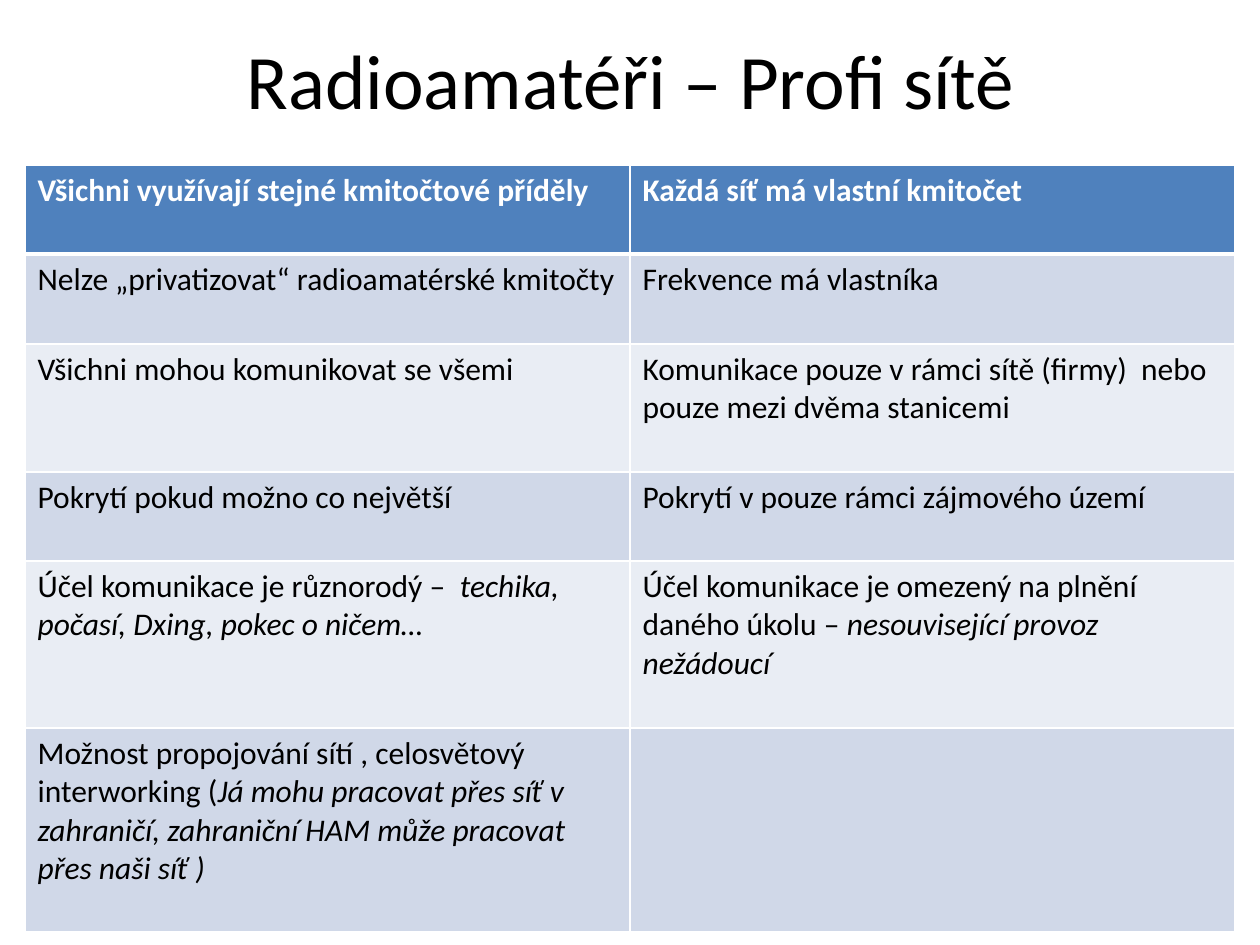
from lxml import etree
from pptx import Presentation
from pptx import util as u
from pptx.dml.color import RGBColor
from pptx.enum import text
from pptx.oxml.ns import qn

TITLE = "Radioamatéři – Profi sítě"
# Each cell is (upright text, italic text).
ROWS = [
    [("Všichni využívají stejné kmitočtové příděly", ""),
     ("Každá síť má vlastní kmitočet", "")],
    [("Nelze „privatizovat“ radioamatérské kmitočty", ""),
     ("Frekvence má vlastníka", "")],
    [("Všichni mohou komunikovat se všemi", ""),
     ("Komunikace pouze v rámci sítě (firmy)  nebo pouze mezi dvěma stanicemi", "")],
    [("Pokrytí pokud možno co největší", ""),
     ("Pokrytí v pouze rámci zájmového území", "")],
    [("Účel komunikace je různorodý –  ", "techika, počasí, Dxing, pokec o ničem…"),
     ("Účel komunikace je omezený na plnění daného úkolu – ",
      "nesouvisející provoz nežádoucí")],
    [("Možnost propojování sítí , celosvětový interworking (",
      "Já mohu pracovat přes síť v zahraničí, zahraniční HAM může pracovat přes naši síť )"),
     ("", "")],
]
ROW_HEIGHTS = [89, 90, 128, 89, 167, 204]
COL_WIDTH = 605
COLORS = {"text": "000000", "white": "FFFFFF", "header": "4F81BD",
          "odd": "D0D8E8", "even": "E9EDF4"}


def px(n):
    return u.Emu(round(n * 914400 / 126))


def add_run(p, content, size=18, color="text", bold=False, italic=False):
    r = p.add_run()
    r.text = content
    r.font.name = "Calibri"
    r.font.size = u.Pt(size)
    r.font.bold = bold
    r.font.italic = italic
    r.font.color.rgb = RGBColor.from_string(COLORS[color])


def set_borders(cell, **widths):
    """Draw white borders, with widths in points by side (L, R, T, B)."""
    tc_pr = cell._tc.get_or_add_tcPr()
    for i, (side, width) in enumerate(widths.items()):
        ln = etree.Element(qn("a:ln" + side), w=str(u.Pt(width)))
        fill = etree.SubElement(ln, qn("a:solidFill"))
        etree.SubElement(fill, qn("a:srgbClr"), val=COLORS["white"])
        tc_pr.insert(i, ln)


prs = Presentation()
prs.slide_width, prs.slide_height = u.Inches(10), u.Inches(7.5)
s = prs.slides.add_slide(prs.slide_layouts[5])

title = s.shapes.title
title.left, title.top, title.width, title.height = px(64), px(0), px(1134), px(158)
tf = title.text_frame
tf.vertical_anchor = text.MSO_ANCHOR.MIDDLE
p = tf.paragraphs[0]
p.alignment = text.PP_ALIGN.CENTER
add_run(p, TITLE, size=44)

table = s.shapes.add_table(len(ROWS), 2, px(25), px(165), px(2 * COL_WIDTH),
                           px(sum(ROW_HEIGHTS))).table
for col in table.columns:
    col.width = px(COL_WIDTH)
for i, (row, height) in enumerate(zip(ROWS, ROW_HEIGHTS)):
    table.rows[i].height = px(height)
    header = i == 0
    fill = "header" if header else "odd" if i % 2 else "even"
    for j, parts in enumerate(row):
        cell = table.cell(i, j)
        cell.fill.solid()
        cell.fill.fore_color.rgb = RGBColor.from_string(COLORS[fill])
        set_borders(cell, L=1, R=1, T=3 if i == 1 else 1, B=3 if header else 1)
        for content, italic in zip(parts, (False, True)):
            if content:
                add_run(cell.text_frame.paragraphs[0], content, bold=header,
                        italic=italic, color="white" if header else "text")

prs.save("out.pptx")
